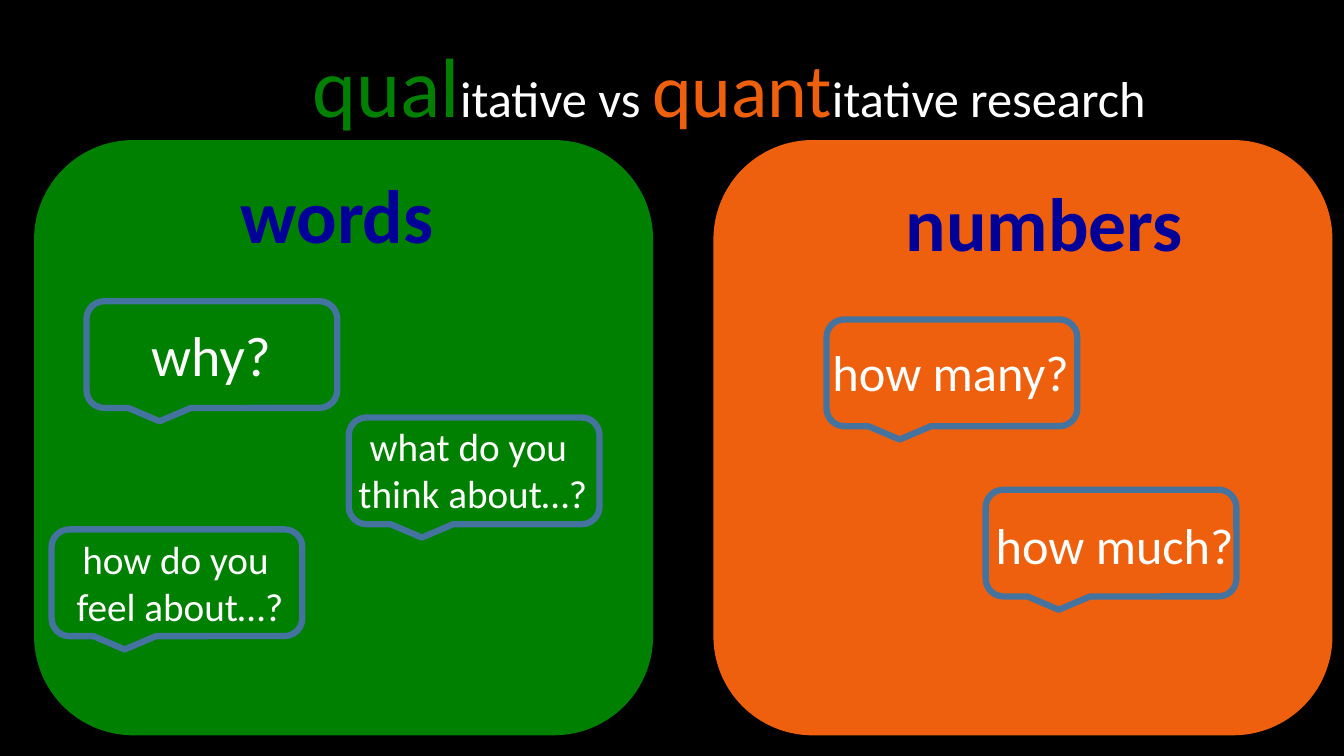
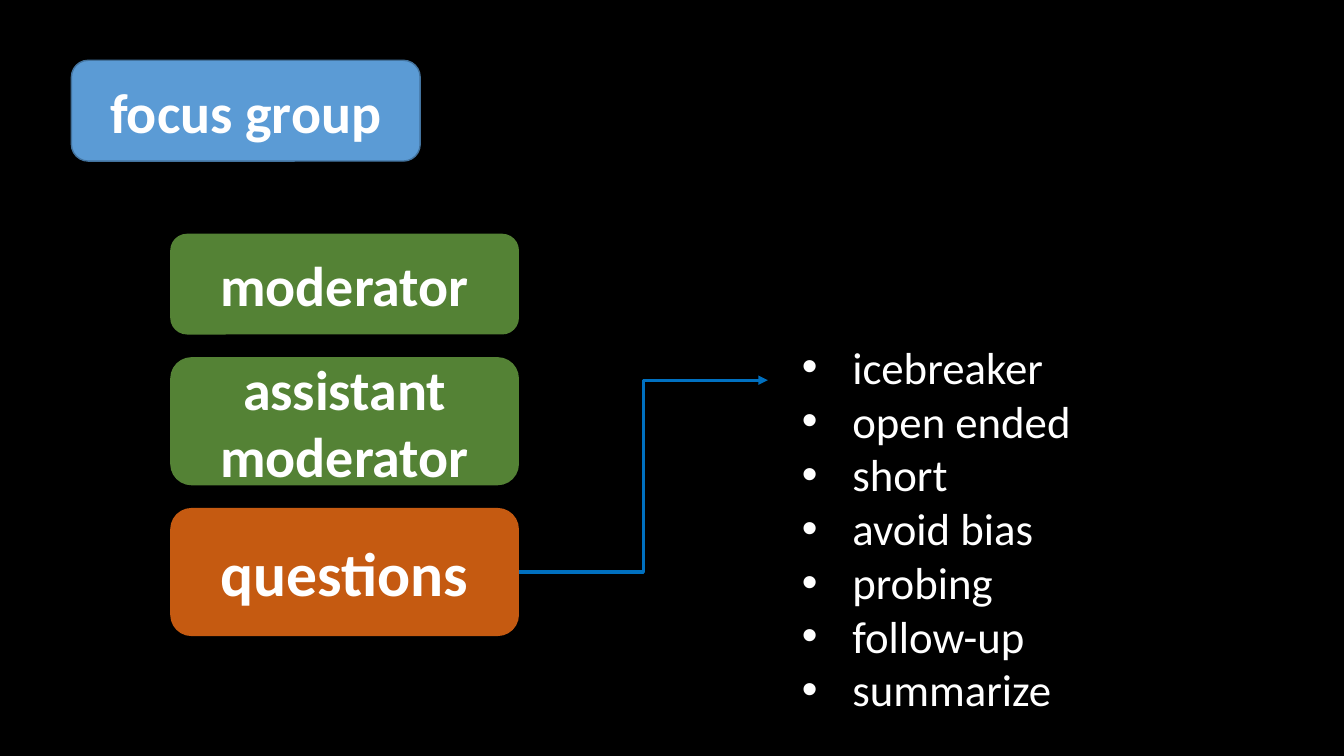
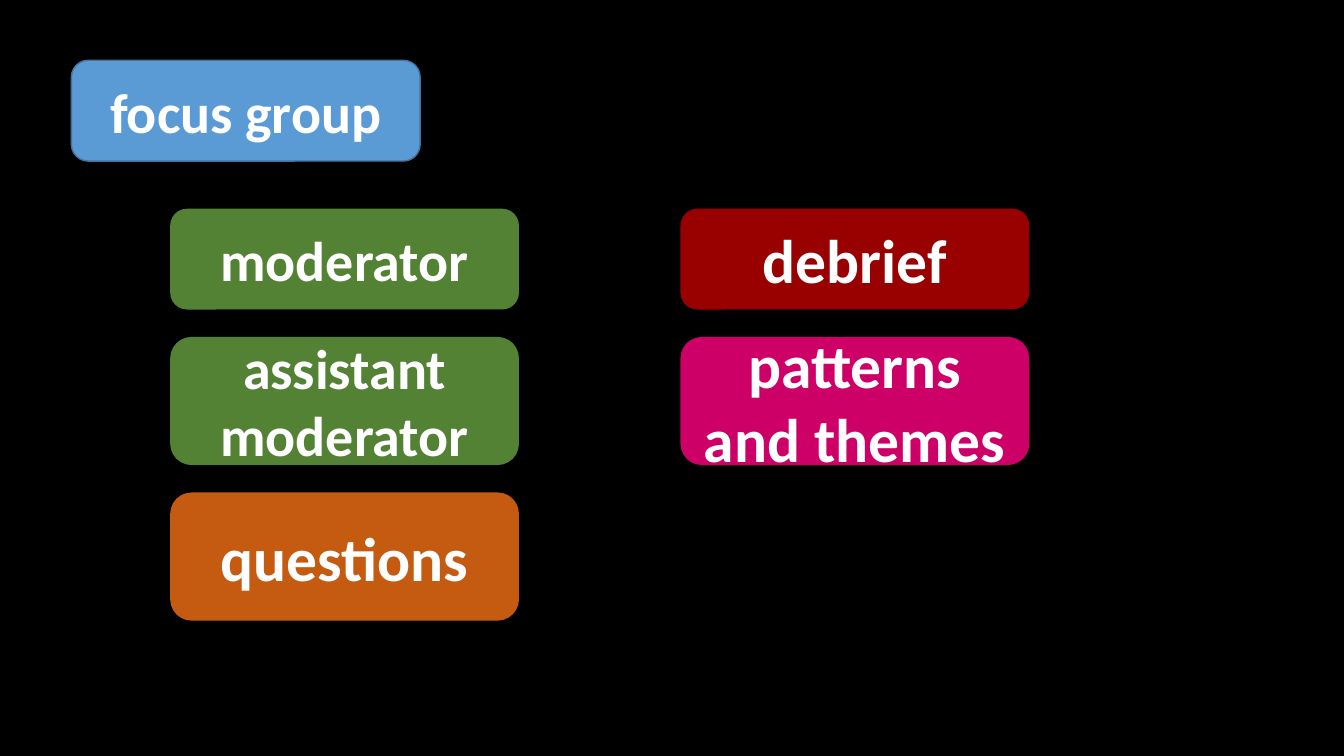
"""Build three slides on qualitative, quantitative and focus group research."""
from dataclasses import dataclass
from typing import Optional

from lxml import etree
from pptx import Presentation
from pptx import util as u
from pptx.dml import color as c
from pptx.enum import shapes as es
from pptx.enum import text as et
from pptx.oxml import ns


@dataclass(frozen=True)
class Theme:
    font: str = "Calibri"
    black: str = "000000"
    white: str = "FFFFFF"
    green: str = "008000"
    orange: str = "EF600E"
    navy: str = "000099"
    steel: str = "43739E"
    blue: str = "5B9BD5"
    moss: str = "548235"
    rust: str = "C55A11"
    red: str = "990000"
    pink: str = "CC0066"
    arrow: str = "0070C0"
    huge: int = 60
    head: int = 54
    large: int = 44
    label: int = 40
    body: int = 36
    list: int = 32
    small: int = 28


T = Theme()


@dataclass(frozen=True)
class Rect:
    x: float
    y: float
    w: float
    h: float

    def emu(self) -> tuple:
        return u.Cm(self.x), u.Cm(self.y), u.Cm(self.w), u.Cm(self.h)


@dataclass(frozen=True)
class Run:
    text: str
    size: int
    color: str


@dataclass(frozen=True)
class Note:
    rect: Rect
    lines: tuple
    size: int
    color: str = T.white
    bold: bool = False
    center: bool = False


@dataclass(frozen=True)
class Label:
    text: str
    color: str
    tall: bool = False
    size: int = T.label


BOX_W, LOW, TALL = 8.79, 2.54, 3.23
LEFT, RIGHT = 4.29, 17.15
ROUND = es.MSO_SHAPE.ROUNDED_RECTANGLE
BUBBLE = es.MSO_SHAPE.ROUNDED_RECTANGULAR_CALLOUT

TITLE = (
    Run("qual", T.huge, T.green),
    Run("itative vs ", T.body, T.white),
    Run("quant", T.head, T.orange),
    Run("itative research", T.body, T.white),
)
PANELS = ((17.98, T.orange), (0.86, T.green))
BUBBLES = ((2.18, 7.59), (20.83, 8.05), (24.84, 12.34), (1.3, 13.34), (8.79, 10.52))
NOTES = (
    Note(Rect(20.73, 8.48, 6.53, 1.8), ("how many?",), T.body),
    Note(Rect(24.84, 12.83, 6.58, 1.8), ("how much?",), T.body),
    Note(Rect(5.82, 4.11, 5.44, 2.57), ("words",), T.head, T.navy, True),
    Note(Rect(22.58, 4.32, 7.57, 2.57), ("numbers",), T.head, T.navy, True),
    Note(Rect(3.56, 7.95, 3.56, 1.96), ("why?",), T.label),
    Note(Rect(1.65, 13.36, 5.77, 2.64), ("how do you ", "feel about…?"),
         T.small, center=True),
    Note(Rect(8.74, 10.52, 6.35, 2.64), ("what do you ", "think about…?"),
         T.small, center=True),
)
TEAM = (
    Label("moderator", T.moss),
    Label("assistant moderator", T.moss, True),
    Label("questions", T.rust, True, T.large),
)
AFTER = (
    Label("debrief", T.red, size=T.large),
    Label("patterns and themes", T.pink, True, T.large),
)
TIPS = ("icebreaker", "open ended", "short", "avoid bias", "probing",
        "follow-up", "summarize")


def rgb(code: str) -> c.RGBColor:
    return c.RGBColor.from_string(code)


def style(font, size: int, color: str, bold: bool = False) -> None:
    font.name = T.font
    font.size = u.Pt(size)
    font.bold = bold
    font.color.rgb = rgb(color)


def new_slide(deck):
    slide = deck.slides.add_slide(deck.slide_layouts[6])
    fill = slide.background.fill
    fill.solid()
    fill.fore_color.rgb = rgb(T.black)
    return slide


def add_box(slide, kind, rect: Rect, fill: Optional[str] = None,
            line: Optional[str] = None, width: float = 1):
    box = slide.shapes.add_shape(kind, *rect.emu())
    box.shadow.inherit = False
    if fill:
        box.fill.solid()
        box.fill.fore_color.rgb = rgb(fill)
    else:
        box.fill.background()
    if line:
        box.line.color.rgb = rgb(line)
        box.line.width = u.Pt(width)
    else:
        box.line.fill.background()
    return box


def add_frame(slide, rect: Rect, wrap: bool = False):
    frame = slide.shapes.add_textbox(*rect.emu()).text_frame
    frame.word_wrap = wrap
    frame.auto_size = et.MSO_AUTO_SIZE.SHAPE_TO_FIT_TEXT
    return frame


def write(frame, lines: tuple, size: int, color: str = T.white,
          bold: bool = False, center: bool = False) -> None:
    frame.text = "\n".join(lines)
    for para in frame.paragraphs:
        style(para.font, size, color, bold)
        if center:
            para.alignment = et.PP_ALIGN.CENTER


def add_label(slide, label: Label, x: float, y: float,
              line: Optional[str] = None):
    rect = Rect(x, y, BOX_W, TALL if label.tall else LOW)
    box = add_box(slide, ROUND, rect, label.color, line)
    frame = box.text_frame
    frame.word_wrap = True
    frame.vertical_anchor = et.MSO_ANCHOR.MIDDLE
    write(frame, (label.text,), label.size, bold=True, center=True)
    return box


def add_stack(slide, labels: tuple, x: float, top: float, gap: float) -> list:
    boxes = []
    for label in labels:
        boxes.append(add_label(slide, label, x, top))
        top += (TALL if label.tall else LOW) + gap
    return boxes


def add_arrow(slide, start, x: float, y: float) -> None:
    line = slide.shapes.add_connector(
        es.MSO_CONNECTOR.ELBOW, start.left + start.width,
        start.top + start.height // 2, u.Cm(x), u.Cm(y))
    line.begin_connect(start, 3)
    line.line.color.rgb = rgb(T.arrow)
    line.line.width = u.Pt(2.25)
    etree.SubElement(line.line._get_or_add_ln(), ns.qn("a:tailEnd"), type="triangle")
    etree.SubElement(line._element.spPr, ns.qn("a:effectLst"))


def add_list(slide, rect: Rect, items: tuple) -> None:
    frame = add_frame(slide, rect, True)
    write(frame, items, T.list)
    for para in frame.paragraphs:
        props = para._p.get_or_add_pPr()
        props.set("marL", str(u.Cm(1.27)))
        props.set("indent", str(-u.Cm(1.27)))
        mark = etree.Element(ns.qn("a:buChar"), char="•")
        face = etree.Element(ns.qn("a:buFont"), typeface="Arial")
        props.insert(0, face)
        props.insert(1, mark)


def draw_versus(deck) -> None:
    slide = new_slide(deck)
    for x, color in PANELS:
        add_box(slide, ROUND, Rect(x, 3.53, 15.6, 15), color)
    para = add_frame(slide, Rect(7.62, 0.71, 21.72, 2.82)).paragraphs[0]
    for part in TITLE:
        run = para.add_run()
        run.text = part.text
        style(run.font, part.size, part.color)
    for x, y in BUBBLES:
        add_box(slide, BUBBLE, Rect(x, y, 6.32, 2.69), line=T.steel, width=4.5)
    for note in NOTES:
        write(add_frame(slide, note.rect), note.lines, note.size,
              note.color, note.bold, note.center)


def draw_group(deck, top: float, gap: float) -> tuple:
    slide = new_slide(deck)
    add_label(slide, Label("focus group", T.blue), 1.8, 1.52, T.steel)
    return slide, add_stack(slide, TEAM, LEFT, top, gap)


def draw_tips(deck) -> None:
    slide, boxes = draw_group(deck, 5.89, 0.57)
    add_arrow(slide, boxes[-1], 19.35, 9.58)
    add_list(slide, Rect(19.96, 8.43, 13.06, 11.2), TIPS)


def draw_after(deck) -> None:
    top, gap = 5.26, 0.69
    slide, _ = draw_group(deck, top, gap)
    add_stack(slide, AFTER, RIGHT, top, gap)


def main() -> None:
    deck = Presentation()
    deck.slide_width, deck.slide_height = u.Cm(33.87), u.Cm(19.05)
    draw_versus(deck)
    draw_tips(deck)
    draw_after(deck)
    deck.save("out.pptx")


if __name__ == "__main__":
    main()
